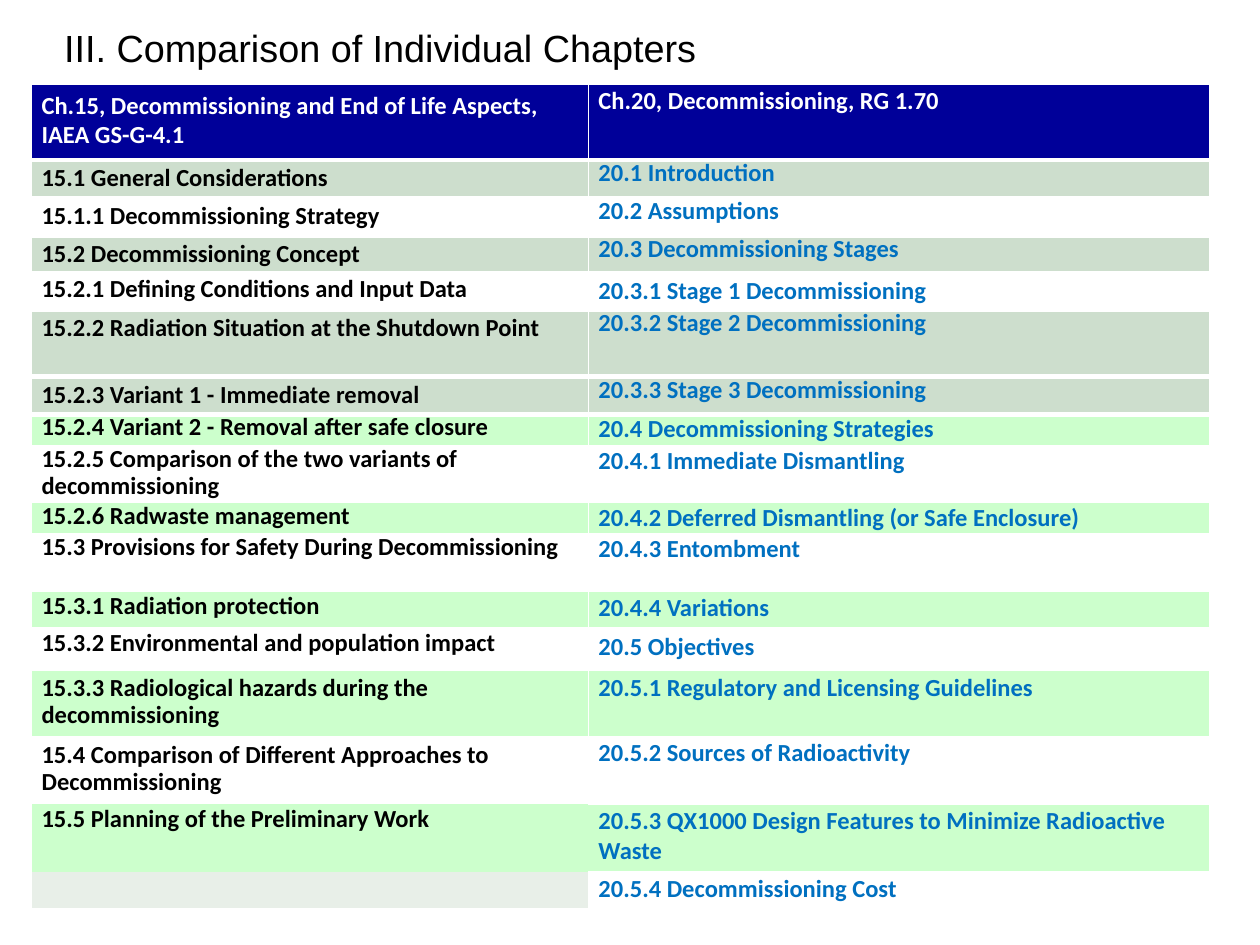
from dataclasses import dataclass

from lxml import etree
from pptx import Presentation
from pptx.dml.color import RGBColor
from pptx.enum.text import MSO_ANCHOR, PP_ALIGN
from pptx.oxml.ns import qn
from pptx.util import Inches, Pt

LEFT, MIDDLE, TOP = PP_ALIGN.LEFT, MSO_ANCHOR.MIDDLE, MSO_ANCHOR.TOP
TITLE_ONLY = 5


@dataclass(frozen=True)
class Theme:
    title_font: str = "Arial"
    table_font: str = "Calibri"
    title_size: float = 21.6
    table_size: float = 14
    black: str = "000000"
    white: str = "FFFFFF"
    blue: str = "0070C0"
    navy: str = "000099"
    sage: str = "CDDECD"
    mint: str = "CCFFCC"
    pale: str = "E8EFE8"
    thin: float = 1
    thick: float = 3


T = Theme()
COLUMNS = (4.42, 4.93)
HEADER = (0.6, T.navy,
          "Ch.15, Decommissioning and End of Life Aspects, IAEA GS-G-4.1", (0.05, 0.05), {},
          "Ch.20, Decommissioning, RG 1.70", (0.05, 0.05), {"line": 0.8, "before": 20})
NONE, SLIM, EVEN, HIGH, LOW = (0, 0), (0.02, 0.02), (0.04, 0.04), (0.02, 0.06), (0.04, 0.06)
CHAPTER = {"line": 0.9, "before": 10}
TIGHT = {"line": 0.8, "before": 20}
SPACED = {"before": 20}
PLAIN = {}
ROWS = [HEADER] + [
    (height, fill, left, left_ins, CHAPTER, right, right_ins, right_fmt)
    for height, fill, left, left_ins, right, right_ins, right_fmt in [
        (0.3, T.sage, "15.1 General Considerations", EVEN,
         "20.1 Introduction", HIGH, TIGHT),
        (0.3, None, "15.1.1 Decommissioning Strategy", EVEN,
         "20.2 Assumptions", HIGH, TIGHT),
        (0.3, T.sage, "15.2 Decommissioning Concept", EVEN,
         "20.3 Decommissioning Stages", HIGH, TIGHT),
        (0.29, None, "15.2.1 Defining Conditions and Input Data", SLIM,
         "20.3.1 Stage 1 Decommissioning", SLIM, SPACED),
        (0.53, T.sage, "15.2.2 Radiation Situation at the Shutdown Point", EVEN,
         "20.3.2 Stage 2 Decommissioning", HIGH, TIGHT),
        (0.3, T.sage, "15.2.3 Variant 1 - Immediate removal", EVEN,
         "20.3.3 Stage 3 Decommissioning", HIGH, TIGHT),
        (0.25, T.mint, "15.2.4 Variant 2 - Removal after safe closure", NONE,
         "20.4 Decommissioning Strategies", NONE, SPACED),
        (0.45, None, "15.2.5 Comparison of the two variants of decommissioning", NONE,
         "20.4.1 Immediate Dismantling", NONE, SPACED),
        (0.25, T.mint, "15.2.6 Radwaste management", NONE,
         "20.4.2 Deferred Dismantling (or Safe Enclosure)", NONE, SPACED),
        (0.45, None, "15.3 Provisions for Safety During Decommissioning", NONE,
         "20.4.3 Entombment", NONE, SPACED),
        (0.29, T.mint, "15.3.1 Radiation protection", SLIM,
         "20.4.4 Variations", SLIM, SPACED),
        (0.34, None, "15.3.2 Environmental and population impact", SLIM,
         "20.5 Objectives", LOW, SPACED),
        (0.53, T.mint, "15.3.3 Radiological hazards during the decommissioning", EVEN,
         "20.5.1 Regulatory and Licensing Guidelines", SLIM, PLAIN),
        (0.53, None, "15.4 Comparison of Different Approaches to Decommissioning", EVEN,
         "20.5.2 Sources of Radioactivity", LOW, TIGHT),
        (0.54, T.mint, "15.5 Planning of the Preliminary Work", SLIM,
         "20.5.3 QX1000 Design Features to Minimize Radioactive Waste", SLIM, PLAIN),
        (0.29, None, "", SLIM, "20.5.4 Decommissioning Cost", SLIM, PLAIN),
    ]
]
LAST_THICK_EDGE = 7
BORDERLESS_FROM = 15


def set_text(tf, text, *, font, size, color, bold=False, line=None, before=None):
    p = tf.paragraphs[0]
    p.alignment = LEFT
    if line:
        p.line_spacing = line
    if before:
        space = etree.SubElement(p._p.get_or_add_pPr(), qn("a:spcBef"))
        etree.SubElement(space, qn("a:spcPct"), val=str(before * 1000))
    if not text:
        p._p.get_or_add_endParaRPr().set("sz", str(size * 100))
        return
    r = p.add_run()
    r.text = text
    r.font.name = font
    r.font.size = Pt(size)
    r.font.bold = bold
    r.font.color.rgb = RGBColor.from_string(color)


def set_borders(cell, widths):
    tc_pr = cell._tc.get_or_add_tcPr()
    for i, (side, width) in enumerate(widths.items()):
        ln = etree.Element(qn(f"a:ln{side}"), w=str(Pt(width)))
        if width:
            fill = etree.SubElement(ln, qn("a:solidFill"))
            etree.SubElement(fill, qn("a:srgbClr"), val=T.white)
        else:
            etree.SubElement(ln, qn("a:noFill"))
        tc_pr.insert(i, ln)


def border_widths(row, col):
    def edge(n):
        return T.thick if 1 <= n <= LAST_THICK_EDGE else T.thin

    widths = {"L": T.thin, "R": T.thin, "T": edge(row), "B": edge(row + 1)}
    if row >= BORDERLESS_FROM:
        if col == 0:
            bottom = T.thin if row == len(ROWS) - 1 else 0
            return {"L": 0, "R": 0, "T": 0, "B": bottom}
        widths["L"] = 0
    elif row == BORDERLESS_FROM - 1 and col == 0:
        widths["B"] = 0
    return widths


def fill_cell(cell, text, fill, insets, color, fmt):
    cell.margin_left = cell.margin_right = Inches(0.08)
    cell.margin_top, cell.margin_bottom = map(Inches, insets)
    cell.vertical_anchor = TOP
    if fill:
        cell.fill.solid()
        cell.fill.fore_color.rgb = RGBColor.from_string(fill)
    else:
        cell.fill.background()
    set_text(cell.text_frame, text, font=T.table_font, size=T.table_size,
             color=color, bold=True, **fmt)


def add_title(s, left, top, width, height):
    sp = s.shapes.title
    sp.left, sp.top, sp.width, sp.height = map(Inches, (left, top, width, height))
    tf = sp.text_frame
    tf.word_wrap = True
    tf.vertical_anchor = MIDDLE
    set_text(tf, "III. Comparison of Individual Chapters", font=T.title_font,
             size=T.title_size, color=T.black, line=0.9)


def add_comparison(s, left, top, width, height):
    table = s.shapes.add_table(len(ROWS), len(COLUMNS), *map(
        Inches, (left, top, width, height))).table
    table.first_row = table.horz_banding = False
    for column, column_width in zip(table.columns, COLUMNS):
        column.width = Inches(column_width)
    for i, (row_height, fill, *content) in enumerate(ROWS):
        table.rows[i].height = Inches(row_height)
        for j, color in enumerate((T.black, T.blue)):
            text, insets, fmt = content[3 * j:3 * j + 3]
            cell = table.cell(i, j)
            fill_cell(cell, text, fill if text else T.pale, insets,
                      T.white if i == 0 else color, fmt)
            set_borders(cell, border_widths(i, j))


def main():
    prs = Presentation()
    prs.slide_width, prs.slide_height = Inches(10), Inches(7.5)
    s = prs.slides.add_slide(prs.slide_layouts[TITLE_ONLY])
    add_title(s, 0.41, 0.23, 6.26, 0.34)
    add_comparison(s, 0.25, 0.67, sum(COLUMNS), sum(row[0] for row in ROWS))
    prs.save("out.pptx")


if __name__ == "__main__":
    main()
